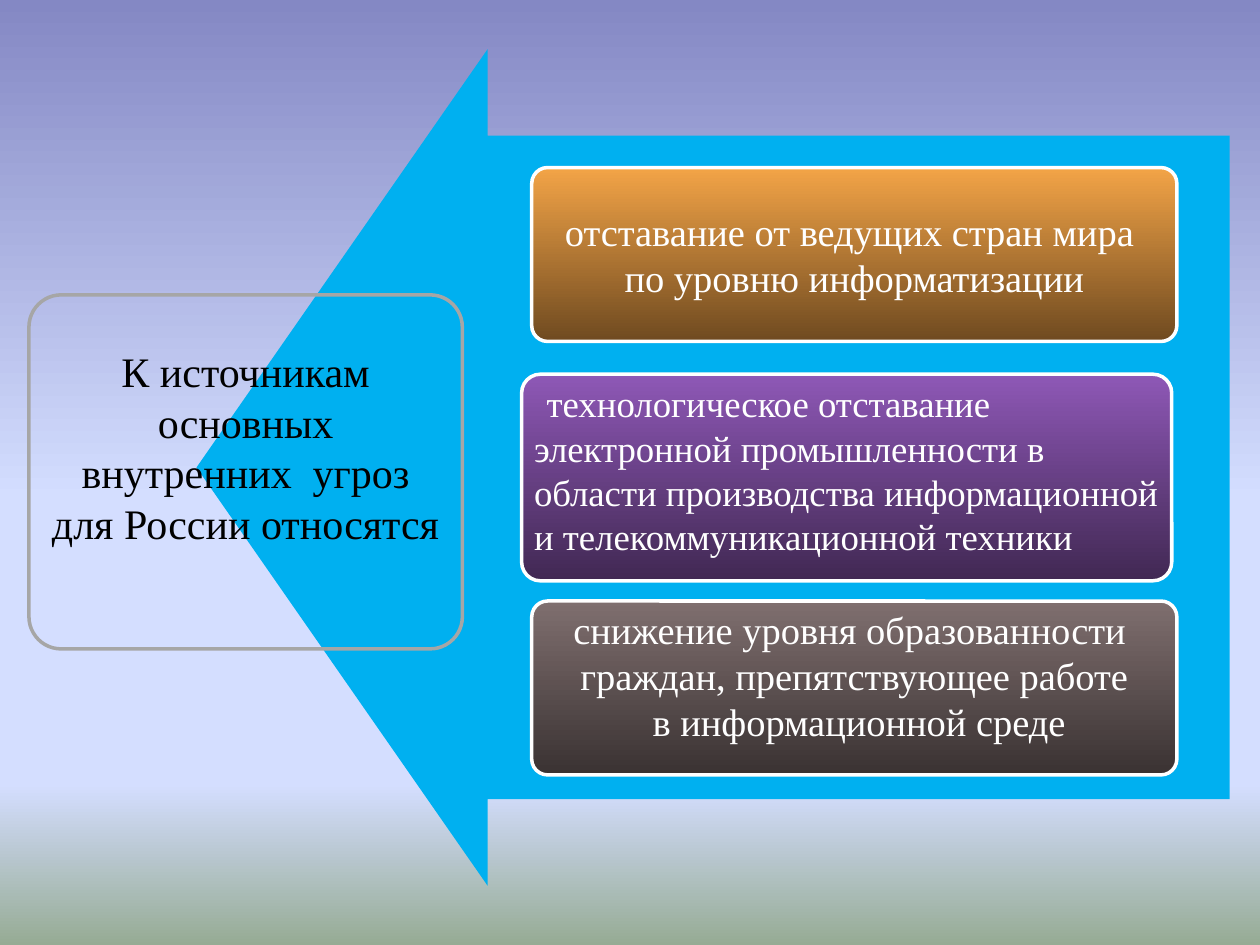
import pptx
import pptx.dml.color
import pptx.enum.shapes
import pptx.enum.text
import pptx.oxml
import pptx.oxml.ns
import pptx.util
from pptx.util import Inches

SHAPES = pptx.enum.shapes.MSO_SHAPE
ANCHORS = pptx.enum.text.MSO_ANCHOR
CENTER = pptx.enum.text.PP_ALIGN.CENTER


def color(value):
    return pptx.dml.color.RGBColor.from_string(value)


def set_gradient(fill, element, stops):
    """Fill from top to bottom with (percent, colour) stops."""
    fill.gradient()
    fill.gradient_angle = 270
    stop_list = element.xpath(".//a:gsLst")[0]
    for stop in list(stop_list):
        stop_list.remove(stop)
    for percent, value in stops:
        stop_list.append(pptx.oxml.parse_xml(
            f'<a:gs {pptx.oxml.ns.nsdecls("a")} pos="{percent * 1000}">'
            f'<a:srgbClr val="{value}"/></a:gs>'))


presentation = pptx.Presentation()
presentation.slide_width = Inches(10)
presentation.slide_height = Inches(7.5)
slide = presentation.slides.add_slide(presentation.slide_layouts[6])
set_gradient(slide.background.fill, slide.element,
             [(0, "8488C4"), (53, "D4DEFF"), (83, "D4DEFF"), (100, "96AB94")])

arrow = slide.shapes.add_shape(
    SHAPES.LEFT_ARROW, Inches(1.56), Inches(0.39), Inches(8.2), Inches(6.64))
arrow.adjustments[0] = 0.793
arrow.adjustments[1] = 0.348
arrow.fill.solid()
arrow.fill.fore_color.rgb = color("00B0F0")
arrow.line.fill.background()
arrow.shadow.inherit = False

# left, top, width, height, gradient, line colour, text, size, text colour, anchor, wrap
boxes = [
    (4.22, 1.33, 5.12, 1.38, ("F3A447", "6F4A20"), "FFFFFF",
     "отставание от ведущих стран мира \nпо уровню информатизации",
     22, "FFFFFF", ANCHORS.MIDDLE, False),
    (4.14, 2.97, 5.16, 1.64, ("8E58B6", "412853"), "FFFFFF",
     "", 21, "FFFFFF", ANCHORS.MIDDLE, True),
    (4.22, 4.77, 5.12, 1.38, ("7F6F6F", "3A3232"), "FFFFFF",
     "снижение уровня образованности \nграждан, препятствующее работе\n"
     " в информационной среде",
     22, "FFFFFF", ANCHORS.TOP, False),
    (0.23, 2.34, 3.44, 2.81, None, "A6A6A6",
     "К источникам основных внутренних  угроз для России относятся",
     24, "000000", ANCHORS.MIDDLE, True),
]
texts = []
for left, top, width, height, gradient, line, text, size, text_color, anchor, wrap in boxes:
    box = slide.shapes.add_shape(
        SHAPES.ROUNDED_RECTANGLE, Inches(left), Inches(top), Inches(width), Inches(height))
    box.adjustments[0] = 0.091
    box.shadow.inherit = False
    if gradient:
        set_gradient(box.fill, box.element, zip((0, 100), gradient))
    else:
        box.fill.background()
        box.text_frame.margin_bottom = Inches(0.45)
    box.line.color.rgb = color(line)
    box.line.width = pptx.util.Pt(2)
    frame = box.text_frame
    frame.text = text
    frame.word_wrap = wrap
    frame.vertical_anchor = anchor
    if anchor == ANCHORS.TOP:
        frame.margin_top = 0
    for paragraph in frame.paragraphs:
        paragraph.alignment = CENTER
    texts.append((frame, size, text_color))

industry = slide.shapes.add_textbox(Inches(4.14), Inches(2.97), Inches(5.23), Inches(1.51))
industry.text_frame.word_wrap = True
industry.text_frame.vertical_anchor = ANCHORS.MIDDLE
industry.text_frame.text = (
    "технологическое отставание электронной промышленности в области "
    "производства информационной и телекоммуникационной техники")
properties = industry.text_frame.paragraphs[0]._p.get_or_add_pPr()
properties.set("marL", "0")
properties.set("indent", str(Inches(0.1)))
texts.append((industry.text_frame, 21, "FFFFFF"))

for frame, size, text_color in texts:
    for paragraph in frame.paragraphs:
        for run in paragraph.runs:
            run.font.name = "Times New Roman"
            run.font.size = pptx.util.Pt(size)
            run.font.color.rgb = color(text_color)

presentation.save("out.pptx")
